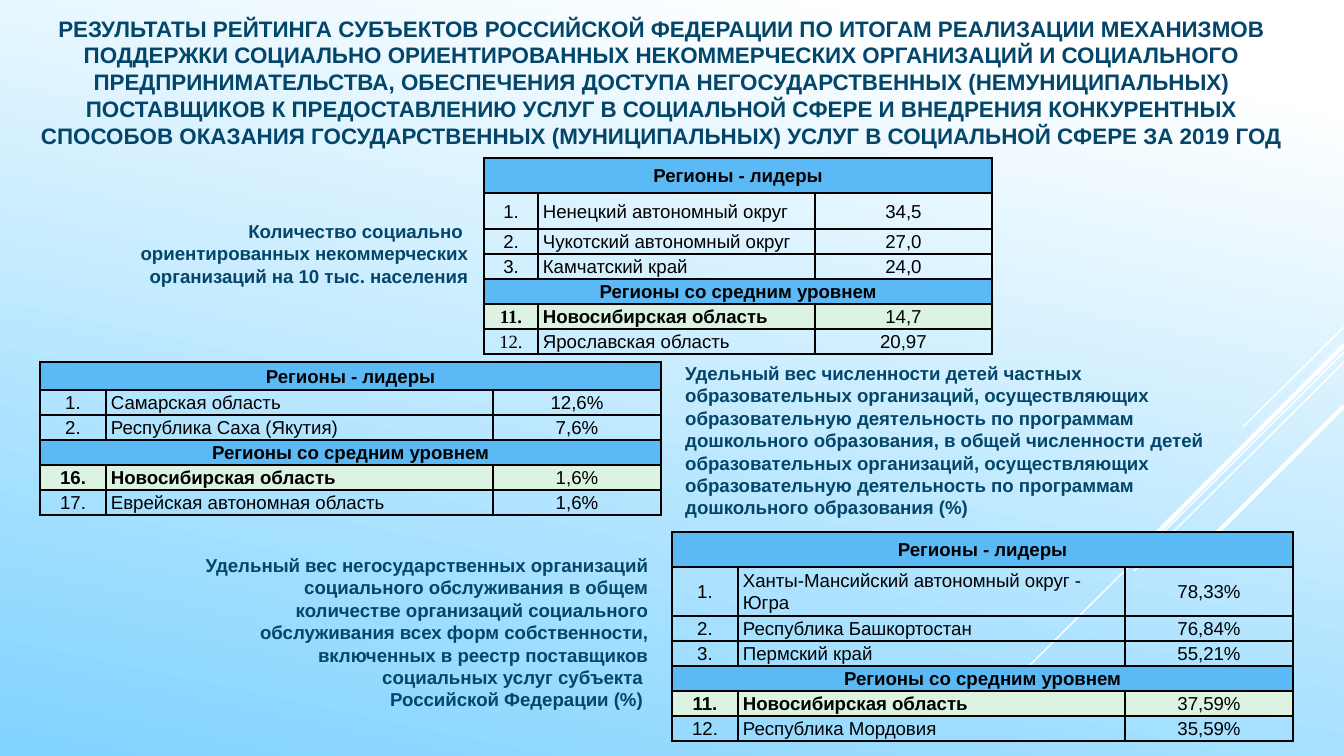
from dataclasses import dataclass

from lxml.etree import SubElement
from pptx import Presentation
from pptx.dml.color import RGBColor as RGB
from pptx.enum.shapes import MSO_CONNECTOR as CONNECTOR
from pptx.enum.text import MSO_ANCHOR as ANCHOR, MSO_AUTO_SIZE as AUTOSIZE, PP_ALIGN as ALIGN
from pptx.oxml.ns import qn
from pptx.util import Emu, Pt


@dataclass(frozen=True)
class Theme:
    heading: str = "034669"
    ink: str = "000000"
    white: str = "FFFFFF"
    sky: str = "80D3FF"
    band: str = "5BBAF6"
    highlight: str = "DCF3E1"
    font: str = "Arial"
    serif: str = "Times New Roman"
    title_size: int = 12
    body_size: int = 10
    border: int = 1
    line_spacing: float = 1.06


def px(length):
    return Emu(round(length * 9144000 / 1344))


class RatingSlide:
    """Holds the theme and the current slide, with one method per kind of element."""

    def __init__(self, deck, theme):
        self.theme = theme
        self.slide = deck.slides.add_slide(deck.slide_layouts[5])

    def background(self):
        fill = self.slide.background.fill
        fill.gradient()
        fill.gradient_angle = 258
        stops = ((0.1, self.theme.white), (1, self.theme.sky))
        for stop, (position, color) in zip(fill.gradient_stops, stops):
            stop.position = position
            stop.color.rgb = RGB.from_string(color)

    def ray(self, start, end, width):
        line = self.slide.shapes.add_connector(CONNECTOR.STRAIGHT, *map(px, start + end))
        line.line.color.rgb = RGB.from_string(self.theme.white)
        line.line.width = Pt(width)
        SubElement(line._element.spPr, qn("a:effectLst"))

    def add_text(self, paragraph, text, align, color, size, bold=True, font=None):
        paragraph.alignment = align
        run = paragraph.add_run()
        run.text = text
        run.font.name = font or self.theme.font
        run.font.size = Pt(size)
        run.font.bold = bold
        run.font.color.rgb = RGB.from_string(color)

    def title(self, text, box):
        heading = self.slide.shapes.title
        heading.left, heading.top, heading.width, heading.height = map(px, box)
        frame = heading.text_frame
        frame.word_wrap = True
        frame.auto_size = AUTOSIZE.NONE
        frame.vertical_anchor = ANCHOR.TOP
        self.add_text(frame.paragraphs[0], text, ALIGN.CENTER, self.theme.heading, self.theme.title_size)

    def caption(self, lines, box, align):
        frame = self.slide.shapes.add_textbox(*map(px, box)).text_frame
        frame.word_wrap = True
        frame.auto_size = AUTOSIZE.SHAPE_TO_FIT_TEXT
        for index, line in enumerate(lines):
            paragraph = frame.add_paragraph() if index else frame.paragraphs[0]
            self.add_text(paragraph, line, align, self.theme.heading, self.theme.body_size)

    def style_cell(self, cell, color):
        properties = cell._tc.get_or_add_tcPr()
        for side in ("a:lnL", "a:lnR", "a:lnT", "a:lnB"):
            edge = SubElement(properties, qn(side), w=str(Pt(self.theme.border)))
            SubElement(SubElement(edge, qn("a:solidFill")), qn("a:srgbClr"), val=self.theme.ink)
        if color:
            cell.fill.solid()
            cell.fill.fore_color.rgb = RGB.from_string(color)
        else:
            cell.fill.background()
        cell.vertical_anchor = ANCHOR.MIDDLE
        cell.margin_left = cell.margin_right = px(5)
        cell.margin_top, cell.margin_bottom = px(1), 0

    def fill_cell(self, cell, text, align, bold, font=None):
        paragraph = cell.text_frame.paragraphs[0]
        paragraph.line_spacing = self.theme.line_spacing
        self.add_text(paragraph, text, align, self.theme.ink, self.theme.body_size, bold, font)

    def rating(self, corner, widths, heights, leaders, middle, rank_font=None):
        rows = [("Регионы - лидеры",), *leaders, ("Регионы со средним уровнем",), *middle]
        size = (sum(widths), sum(heights))
        table = self.slide.shapes.add_table(len(rows), len(widths), *map(px, corner + size)).table
        table.first_row = table.horz_banding = False
        for column, width in zip(table.columns, widths):
            column.width = px(width)
        middle_start = len(leaders) + 2
        for index, (row, height, texts) in enumerate(zip(table.rows, heights, rows)):
            row.height = px(height)
            is_band, is_home = len(texts) == 1, index == middle_start
            color = self.theme.band if is_band else self.theme.highlight if is_home else None
            for cell in row.cells:
                self.style_cell(cell, color)
            if is_band:
                table.cell(index, 0).merge(table.cell(index, len(widths) - 1))
                self.fill_cell(table.cell(index, 0), texts[0], ALIGN.CENTER, True)
                continue
            rank, region, value = row.cells
            self.fill_cell(rank, texts[0], ALIGN.CENTER, is_home, rank_font if index >= middle_start else None)
            self.fill_cell(region, texts[1], ALIGN.LEFT, is_home)
            self.fill_cell(value, texts[2], ALIGN.CENTER, False)


def main():
    deck = Presentation()
    deck.slide_width, deck.slide_height = px(1344), px(756)
    theme = Theme()
    page = RatingSlide(deck, theme)
    page.background()

    for start_y, end, width in (
        (327, (1243, 427), 0.75),
        (352, (1015, 680), 0.75),
        (362, (1134, 571), 0.75),
        (345, (1152, 538), 2.25),
        (406, (1204, 546), 2.25),
    ):
        page.ray((1344, start_y), end, width)

    page.title(
        "РЕЗУЛЬТАТЫ РЕЙТИНГА СУБЪЕКТОВ РОССИЙСКОЙ ФЕДЕРАЦИИ ПО ИТОГАМ РЕАЛИЗАЦИИ МЕХАНИЗМОВ "
        "ПОДДЕРЖКИ СОЦИАЛЬНО ОРИЕНТИРОВАННЫХ НЕКОММЕРЧЕСКИХ ОРГАНИЗАЦИЙ И СОЦИАЛЬНОГО "
        "ПРЕДПРИНИМАТЕЛЬСТВА, ОБЕСПЕЧЕНИЯ ДОСТУПА НЕГОСУДАРСТВЕННЫХ (НЕМУНИЦИПАЛЬНЫХ) "
        "ПОСТАВЩИКОВ К ПРЕДОСТАВЛЕНИЮ УСЛУГ В СОЦИАЛЬНОЙ СФЕРЕ И ВНЕДРЕНИЯ КОНКУРЕНТНЫХ "
        "СПОСОБОВ ОКАЗАНИЯ ГОСУДАРСТВЕННЫХ (МУНИЦИПАЛЬНЫХ) УСЛУГ В СОЦИАЛЬНОЙ СФЕРЕ ЗА 2019 ГОД",
        (16, 8, 1292, 149),
    )
    page.caption(
        ["Количество социально ",
         "ориентированных некоммерческих организаций на 10 тыс. населения"],
        (40, 213, 441, 82), ALIGN.RIGHT,
    )
    page.caption(
        ["Удельный вес численности детей частных образовательных организаций, осуществляющих "
         "образовательную деятельность по программам дошкольного образования, в общей численности "
         "детей образовательных организаций, осуществляющих образовательную деятельность по "
         "программам дошкольного образования (%)"],
        (672, 355, 555, 172), ALIGN.LEFT,
    )
    page.caption(
        ["Удельный вес негосударственных организаций социального обслуживания в общем количестве "
         "организаций социального обслуживания всех форм собственности, включенных в реестр "
         "поставщиков социальных услуг субъекта ",
         "Российской Федерации (%) "],
        (189, 547, 472, 172), ALIGN.RIGHT,
    )

    page.rating(
        (484, 158), (54, 277, 177), (35, 36, 25, 25, 25, 25, 25),
        [("1.", "Ненецкий автономный округ", "34,5"),
         ("2.", "Чукотский автономный округ", "27,0"),
         ("3.", "Камчатский край", "24,0")],
        [("11.", "Новосибирская область", "14,7"),
         ("12.", "Ярославская область", "20,97")],
        theme.serif,
    )
    wide_columns = (66, 387, 168)
    page.rating(
        (40, 362), wide_columns, (28, 25, 25, 25, 25, 25),
        [("1.", "Самарская область", "12,6%"),
         ("2.", "Республика Саха (Якутия)", "7,6%")],
        [("16.", "Новосибирская область", "1,6%"),
         ("17.", "Еврейская автономная область", "1,6%")],
    )
    page.rating(
        (672, 532), wide_columns, (35, 49, 25, 25, 25, 25, 25),
        [("1.", "Ханты-Мансийский автономный округ - Югра", "78,33%"),
         ("2.", "Республика Башкортостан", "76,84%"),
         ("3.", "Пермский край", "55,21%")],
        [("11.", "Новосибирская область", "37,59%"),
         ("12.", "Республика Мордовия", "35,59%")],
    )
    deck.save("out.pptx")


if __name__ == "__main__":
    main()
